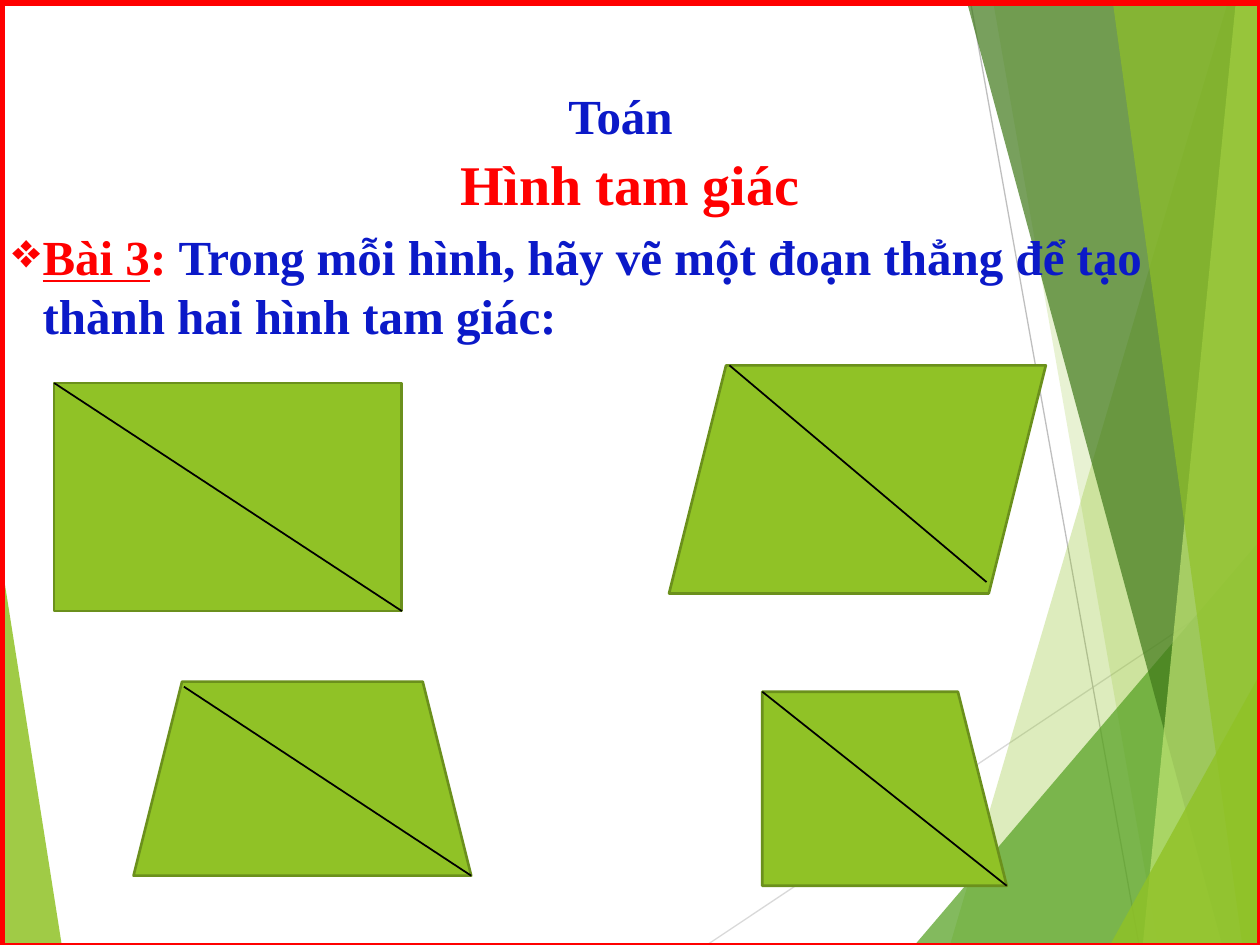
import pptx
import pptx.dml.color
import pptx.enum.shapes
import pptx.enum.text
import pptx.oxml
import pptx.oxml.ns
import pptx.util
from lxml import etree

Inches = pptx.util.Inches
Pt = pptx.util.Pt
RGBColor = pptx.dml.color.RGBColor
Shape = pptx.enum.shapes.MSO_SHAPE
qn = pptx.oxml.ns.qn

RED = RGBColor(0xFF, 0x00, 0x00)
BLUE = RGBColor(0x0B, 0x19, 0xC8)
BLACK = RGBColor(0x00, 0x00, 0x00)
LIME = RGBColor(0x90, 0xC2, 0x26)
PALE_LIME = RGBColor(0xC0, 0xE4, 0x74)
GREEN = RGBColor(0x54, 0xA0, 0x21)
DARK_GREEN = RGBColor(0x3F, 0x78, 0x19)
OLIVE = RGBColor(0x6B, 0x90, 0x1C)
LIGHT_GRAY = RGBColor(0xD9, 0xD9, 0xD9)
GRAY = RGBColor(0xBF, 0xBF, 0xBF)

FONT = "Times New Roman"

RAYS = [
    ((5.61, 7.5), (10, 4.57), LIGHT_GRAY),
    ((7.7, 0), (9.04, 7.5), GRAY),
]
FACETS = [
    ([(0, 4.39), (0.49, 7.5), (0, 7.5)], LIME, 85),
    ([(9.75, 0), (7.54, 7.5), (10, 7.5), (10, 0)], LIME, 30),
    ([(7.88, 0), (9.19, 7.5), (10, 7.5), (10, 0)], LIME, 20),
    ([(7.26, 7.5), (10, 4.29), (10, 7.5)], GREEN, 72),
    ([(7.67, 0), (9.7, 7.5), (10, 7.5), (10, 0)], DARK_GREEN, 70),
    ([(9.81, 0), (9.07, 7.5), (10, 7.5), (10, 0)], PALE_LIME, 70),
    ([(8.83, 0), (9.86, 7.5), (10, 7.5), (9.98, 0)], LIME, 65),
    ([(8.81, 7.5), (10, 5.35), (10, 7.5)], LIME, 80),
]
QUADRILATERALS = [
    (Shape.RECTANGLE, (0.43, 3.04, 2.76, 1.81), 0, (0, 0), (2.76, 1.81)),
    (Shape.PARALLELOGRAM, (5.31, 2.9, 2.99, 1.81), 0, (0.48, 0), (2.52, 1.72)),
    (Shape.TRAPEZOID, (1.06, 5.41, 2.68, 1.54), 0, (0.4, 0.04), (2.68, 1.54)),
    (Shape.FLOWCHART_MANUAL_INPUT, (6.05, 5.49, 1.94, 1.54), 90, (0, 0), (1.94, 1.54)),
]


def add_line(page, start, end, color, width):
    line = page.shapes.add_connector(
        pptx.enum.shapes.MSO_CONNECTOR.STRAIGHT,
        *(Inches(value) for value in (*start, *end)),
    )
    line.line.color.rgb = color
    line.line.width = Pt(width)
    etree.SubElement(line._element.spPr, qn("a:effectLst"))


def add_facet(page, left, top, points, color, opacity):
    corners = [(Inches(left + x), Inches(top + y)) for x, y in points]
    builder = page.shapes.build_freeform(*corners[0])
    builder.add_line_segments(corners[1:], close=True)
    facet = builder.convert_to_shape()
    facet.shadow.inherit = False
    facet.fill.solid()
    facet.fill.fore_color.rgb = color
    facet.line.fill.background()
    tint = facet._element.spPr.find(qn("a:solidFill"))[0]
    etree.SubElement(tint, qn("a:alpha"), val=str(opacity * 1000))


def add_backdrop(page, left, top):
    def place(point):
        return left + point[0], top + point[1]

    facets = iter(FACETS)
    add_facet(page, left, top, *next(facets))
    for start, end, color in RAYS:
        add_line(page, place(start), place(end), color, 0.75)
    for facet in facets:
        add_facet(page, left, top, *facet)


def add_frame(page, left, top, width, height):
    frame = page.shapes.add_shape(
        Shape.RECTANGLE, Inches(left), Inches(top), Inches(width), Inches(height)
    )
    frame.shadow.inherit = False
    frame.fill.background()
    frame.line.color.rgb = RED
    frame.line.width = Pt(4.5)


def add_text(page, left, top, width, height, spans, size, align):
    box = page.shapes.add_textbox(
        Inches(left), Inches(top), Inches(width), Inches(height)
    )
    box.text_frame.word_wrap = True
    para = box.text_frame.paragraphs[0]
    para.alignment = align
    for text, color, underline in spans:
        span = para.add_run()
        span.text = text
        span.font.name = FONT
        span.font.size = Pt(size)
        span.font.bold = True
        span.font.color.rgb = color
        if underline:
            span.font.underline = True
    return box


def add_heading(page, left, top, width):
    center = pptx.enum.text.PP_ALIGN.CENTER
    subject = add_text(
        page, left + 0.05, top, width - 0.06, 0.54, [("Toán", BLUE, False)], 28, center
    )
    frame = subject.text_frame
    frame.margin_left = Inches(0.07)
    frame.margin_right = Inches(0.26)
    frame.margin_top = frame.margin_bottom = Inches(0.04)
    add_text(
        page, left, top + 0.5, width, 0.64, [("Hình tam giác", RED, False)], 32, center
    )


def add_task(page, left, top, width, height):
    spans = [
        ("Bài 3", RED, True),
        (": ", RED, False),
        (
            "Trong mỗi hình, hãy vẽ một đoạn thẳng để tạo thành hai hình tam giác:",
            BLUE,
            False,
        ),
    ]
    box = add_text(
        page, left, top, width, height, spans, 28, pptx.enum.text.PP_ALIGN.LEFT
    )
    settings = box.text_frame.paragraphs[0]._p.get_or_add_pPr()
    settings.set("marL", str(Inches(0.24)))
    settings.set("indent", str(-Inches(0.24)))
    etree.SubElement(settings, qn("a:buChar"), char="❖")


def add_quadrilateral(page, kind, box, rotation, start, end):
    left, top, width, height = box
    if rotation == 90:
        shift = (width - height) / 2
        box = left + shift, top - shift, height, width
    figure = page.shapes.add_shape(kind, *(Inches(value) for value in box))
    figure.rotation = rotation
    figure.shadow.inherit = False
    figure.fill.solid()
    figure.fill.fore_color.rgb = LIME
    figure.line.color.rgb = OLIVE
    figure.line.width = Pt(1.5)
    add_line(
        page,
        (left + start[0], top + start[1]),
        (left + end[0], top + end[1]),
        BLACK,
        1,
    )


def main():
    deck = pptx.Presentation()
    deck.slide_width = Inches(10)
    deck.slide_height = Inches(7.5)
    page = deck.slides.add_slide(deck.slide_layouts[6])
    add_backdrop(page, 0, 0)
    add_task(page, 0, 1.75, 10, 1.04)
    add_frame(page, 0.01, 0.02, 10, 7.5)
    add_heading(page, 0, 0.64, 10)
    for quadrilateral in QUADRILATERALS:
        add_quadrilateral(page, *quadrilateral)
    deck.save("out.pptx")


if __name__ == "__main__":
    main()
